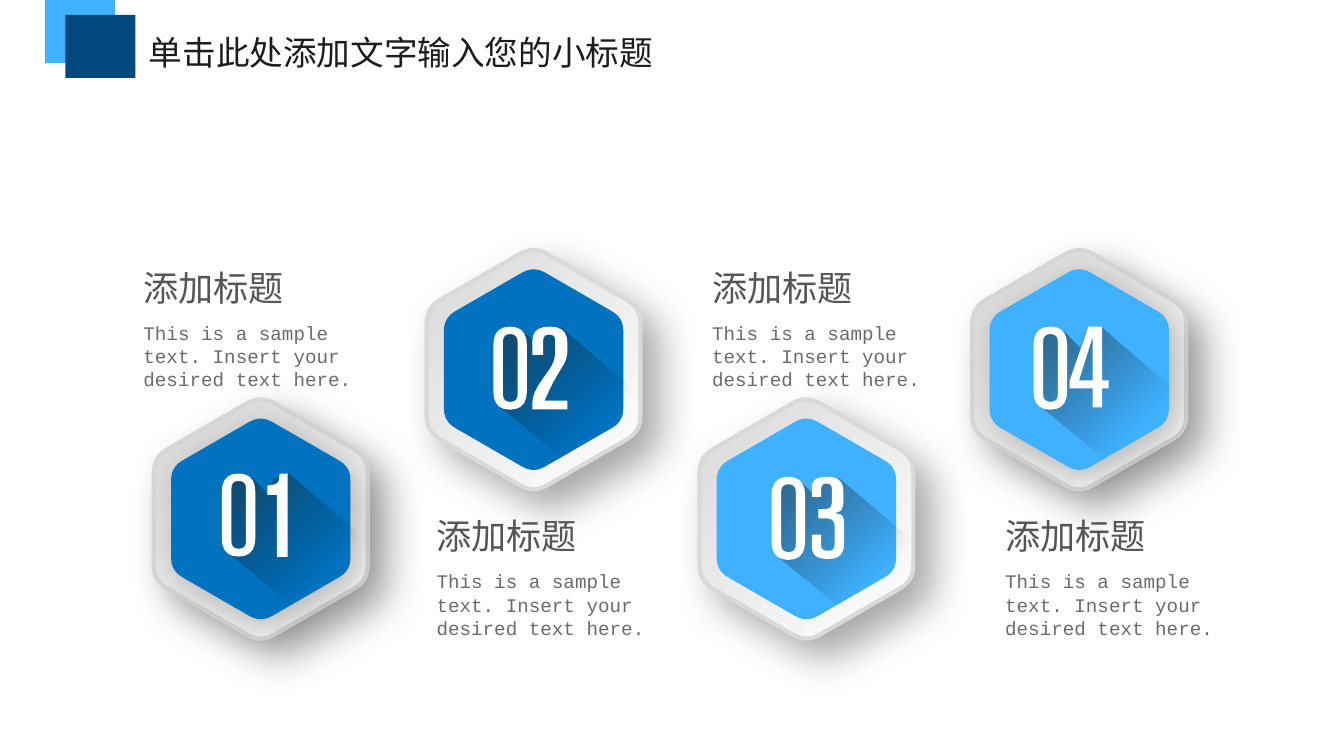
import math
from dataclasses import dataclass
from typing import Sequence

from lxml import etree
from pptx import Presentation
from pptx import util as u
from pptx.dml.color import RGBColor
from pptx.enum import shapes, text
from pptx.oxml import ns

COLORS = {
    "sky": "3FB1FF", "blue": "0072BF", "navy": "00487E",
    "white": "FFFFFF", "silver": "D9D9DA", "black": "000000",
    "shade": "272727", "deep_shade": "0D0D0D",
    "title": "1C1C1C", "heading": "555555", "body": "6B6B6B",
}
CJK_FONT = "Noto Sans CJK SC"
BODY_FONT = "Courier New"

OUTER_RADIUS, INNER_RADIUS = 66.2, 55.5
FIRST_CENTER, BADGE_STEP = 139.7, 146.16
HIGH_BADGE, LOW_BADGE = 198, 278
HIGH_TEXT, LOW_TEXT = 139, 272.2

# Corners are (x, y, rounding length), measured from the top left of a digit.
Corner = tuple[float, float, float]
Contour = Sequence[Corner]
DIGITS: dict[str, list[Contour]] = {
    "0": [
        [(0, 0, 10), (18, 0, 10), (18, 44.5, 10), (0, 44.5, 10)],
        [(5.2, 4, 4), (13, 4, 4), (13, 40.3, 4), (5.2, 40.3, 4)],
    ],
    "1": [
        [(0, 6.5, 0), (6, 5.5, 3), (6.5, 0, 0), (10.8, 0, 0), (10.8, 44.6, 0),
         (5, 44.6, 0), (5, 11.5, 0), (0, 11.5, 0)],
    ],
    "2": [
        [(0, 15.1, 0), (0, 0, 9), (18.7, 0, 9), (18.7, 17, 4), (10.8, 30.2, 4),
         (6.5, 39.6, 0), (18.7, 39.6, 0), (18.7, 44.3, 0), (0, 44.3, 0),
         (0, 38, 4), (2.9, 31.7, 4), (12.2, 18.5, 5), (12.2, 4.3, 3),
         (5.8, 4.3, 3), (5.8, 15.1, 0)],
    ],
    "3": [
        [(0, 10.8, 0), (0, 0, 8), (17, 0, 8), (17, 18, 6), (12.2, 19.4, 0),
         (17.3, 20.5, 4), (17.3, 44, 8), (0, 44, 8), (0, 31, 0), (5, 31, 0),
         (5, 39.6, 3), (12.2, 39.6, 3), (12.2, 22.3, 4), (3.6, 22.3, 0),
         (3.6, 17.3, 0), (10.8, 17.3, 4), (10.8, 3.6, 3), (5, 3.6, 3),
         (5, 10.8, 0)],
    ],
    "4": [
        [(10, 0, 0), (17.3, 0, 0), (17.3, 28.8, 0), (20.9, 28.8, 0),
         (20.9, 33.1, 0), (17.3, 33.1, 0), (17.3, 43.2, 0), (12.2, 43.2, 0),
         (12.2, 33.1, 0), (0, 33.1, 0), (0, 28.8, 0)],
        [(12.2, 28.8, 0), (12.2, 5.8, 0), (8.6, 17.3, 0), (5, 28.8, 0)],
    ],
}
LONG_SHADOW: Contour = [
    (37, 70, 0), (3, 42, 0), (3, 3.5, 0), (16.5, 3, 0),
    (25, 11.5, 0), (28, 3, 0), (36.5, 0.7, 0), (78.8, 37, 0),
]


@dataclass(frozen=True)
class Badge:
    digit: str
    color: str
    high: bool
    number_left: float  # from the badge centre
    number_top: float
    digit_gap: float  # from the zero to the second digit
    text_left: float
    inner_shadow: bool


BADGES = [
    Badge("1", "blue", False, -20.9, -24.3, 24.5, 69.8, True),
    Badge("2", "blue", True, -21.6, -23, 21, 226.8, False),
    Badge("3", "sky", False, -18.7, -22.5, 21.6, 374.4, False),
    Badge("4", "sky", True, -24.5, -23, 19.4, 531.4, True),
]


def rgb(color: str) -> RGBColor:
    return RGBColor.from_string(COLORS[color])


def rounded(contour: Contour, left: float, top: float) -> list[tuple[int, int]]:
    """Return the outline with each corner turned into a quadratic curve."""
    points = []
    for index, (x, y, cut) in enumerate(contour):
        if not cut:
            points.append((x, y))
            continue
        ends = []
        for near_x, near_y, _ in (contour[index - 1], contour[(index + 1) % len(contour)]):
            share = min(cut / math.dist((x, y), (near_x, near_y)), 0.5)
            ends.append((x + (near_x - x) * share, y + (near_y - y) * share))
        (ax, ay), (bx, by) = ends
        for t in (0, 0.2, 0.4, 0.6, 0.8, 1):
            a, c, b = (1 - t) ** 2, 2 * t * (1 - t), t ** 2
            points.append((a * ax + c * x + b * bx, a * ay + c * y + b * by))
    return [(u.Pt(left + x), u.Pt(top + y)) for x, y in points]


def add_outline(group, contours: Sequence[Contour], left: float, top: float, color: str = "white"):
    outlines = [rounded(contour, left, top) for contour in contours]
    builder = group.shapes.build_freeform(*outlines[0][0])
    builder.add_line_segments(outlines[0][1:])
    for outline in outlines[1:]:
        builder.move_to(*outline[0])
        builder.add_line_segments(outline[1:])
    shape = builder.convert_to_shape()
    shape.shadow.inherit = False
    shape.fill.solid()
    shape.fill.fore_color.rgb = rgb(color)
    shape.line.fill.background()
    return shape


def hexagon(radius: float) -> Contour:
    corners = [math.radians(60 * step - 90) for step in range(6)]
    return [(radius * math.cos(a), radius * math.sin(a), radius / 8) for a in corners]


def add_color(parent, color: str, opacity: int) -> None:
    element = etree.SubElement(parent, ns.qn("a:srgbClr"), val=COLORS[color])
    etree.SubElement(element, ns.qn("a:alpha"), val=str(opacity * 1000))


def set_gradient(shape, stops: Sequence[tuple[int, str, int]]) -> None:
    """Fill diagonally with (position, colour, opacity) stops."""
    shape.fill.gradient()
    shape.fill.gradient_angle = 315
    stop_list = shape._element.spPr.find(ns.qn("a:gradFill")).find(ns.qn("a:gsLst"))
    for stop in list(stop_list):
        stop_list.remove(stop)
    for position, color, opacity in stops:
        stop = etree.SubElement(stop_list, ns.qn("a:gs"), pos=str(position * 1000))
        add_color(stop, color, opacity)


def set_shadow(shape, opacity: int, blur: float, distance: float) -> None:
    effects = shape._element.spPr.find(ns.qn("a:effectLst"))
    shadow = etree.SubElement(
        effects, ns.qn("a:outerShdw"), blurRad=str(u.Pt(blur)), dist=str(u.Pt(distance)),
        dir="2700000", algn="tl", rotWithShape="0")
    add_color(shadow, "black", opacity)


def add_badge(slide, badge: Badge, center_x: float) -> None:
    center_y = HIGH_BADGE if badge.high else LOW_BADGE
    group = slide.shapes.add_group_shape()
    rim = add_outline(group, [hexagon(OUTER_RADIUS)], center_x, center_y)
    set_gradient(rim, [(0, "silver", 100), (100, "white", 100)])
    rim.line.color.rgb = rgb("silver")
    rim.line.width = u.Pt(2.25)
    set_shadow(rim, 35, 22, 13)
    face = add_outline(group, [hexagon(INNER_RADIUS)], center_x, center_y, badge.color)
    if badge.inner_shadow:
        set_shadow(face, 28, 22, 6)
    left, top = center_x + badge.number_left, center_y + badge.number_top
    long_shadow = add_outline(group, [LONG_SHADOW], left, top)
    set_gradient(long_shadow, [(0, "shade", 55), (73, "deep_shade", 0), (100, "shade", 0)])
    add_outline(group, DIGITS["0"], left, top)
    add_outline(group, DIGITS[badge.digit], left + badge.digit_gap, top)


def add_text(slide, words: str, box: tuple[float, float, float, float],
             size: float, font: str, color: str, wrap: bool = True) -> None:
    frame = slide.shapes.add_textbox(*map(u.Pt, box)).text_frame
    frame.word_wrap = wrap
    frame.auto_size = text.MSO_AUTO_SIZE.SHAPE_TO_FIT_TEXT
    run = frame.paragraphs[0].add_run()
    run.text = words
    run.font.size = u.Pt(size)
    run.font.name = font
    run.font.color.rgb = rgb(color)
    etree.SubElement(run.font._element, ns.qn("a:ea"), typeface=font)


def add_square(slide, left: float, top: float, height: float, color: str) -> None:
    shape = slide.shapes.add_shape(
        shapes.MSO_SHAPE.RECTANGLE, u.Pt(left), u.Pt(top), u.Pt(37.6), u.Pt(height))
    shape.shadow.inherit = False
    shape.fill.solid()
    shape.fill.fore_color.rgb = rgb(color)
    shape.line.fill.background()


def main() -> None:
    presentation = Presentation()
    presentation.slide_width, presentation.slide_height = u.Pt(720), u.Pt(405)
    slide = presentation.slides.add_slide(presentation.slide_layouts[6])
    add_square(slide, 24, 0, 33.8, "sky")
    add_square(slide, 35, 8, 33.8, "navy")
    add_text(slide, "单击此处添加文字输入您的小标题", (72.7, 13.7, 287.3, 28.8),
             18, CJK_FONT, "title", wrap=False)
    for index, badge in enumerate(BADGES):
        add_badge(slide, badge, FIRST_CENTER + index * BADGE_STEP)
    for badge in BADGES:
        top = LOW_TEXT if badge.high else HIGH_TEXT
        add_text(slide, "This is a sample text. Insert your desired text here.",
                 (badge.text_left, top + 29.5, 141.8, 32.4), 10.3, BODY_FONT, "body")
        add_text(slide, "添加标题", (badge.text_left, top, 107.3, 30.2),
                 18.8, CJK_FONT, "heading")
    presentation.save("out.pptx")


if __name__ == "__main__":
    main()
